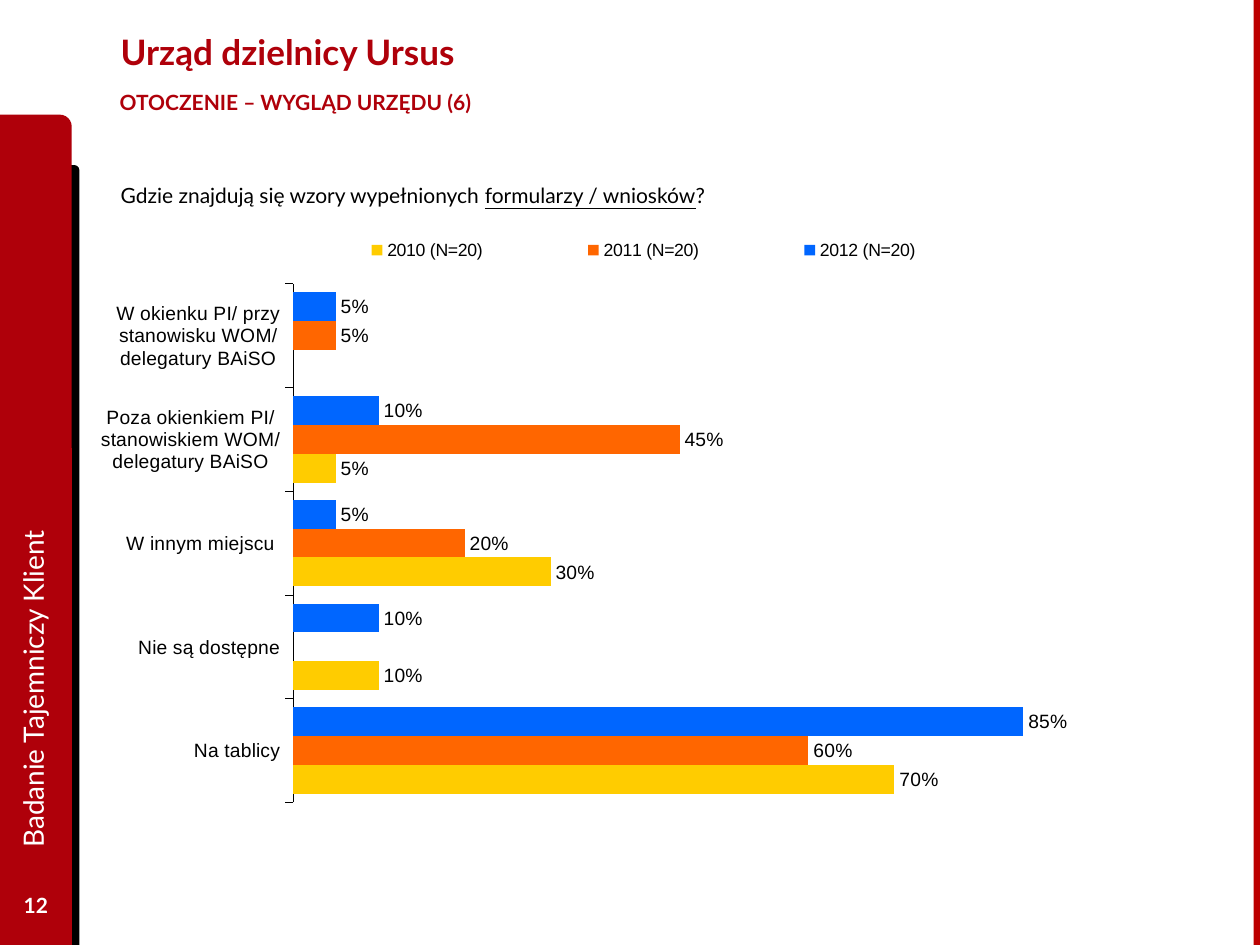
from dataclasses import dataclass

from lxml import etree
from pptx import Presentation
from pptx.chart.data import CategoryChartData
from pptx.dml.color import RGBColor
from pptx.enum.chart import (XL_CHART_TYPE, XL_LABEL_POSITION,
                             XL_LEGEND_POSITION, XL_TICK_MARK)
from pptx.enum.shapes import MSO_SHAPE
from pptx.enum.text import MSO_ANCHOR, PP_ALIGN
from pptx.oxml.ns import qn
from pptx.util import Inches, Pt

RECTANGLE = MSO_SHAPE.RECTANGLE
ROUND_CORNER = MSO_SHAPE.ROUND_1_RECTANGLE
TOP, MIDDLE = MSO_ANCHOR.TOP, MSO_ANCHOR.MIDDLE
LEFT, CENTER = PP_ALIGN.LEFT, PP_ALIGN.CENTER

COLORS = {
    "black": "000000", "white": "FFFFFF", "red": "AF000A", "edge": "BD0000",
    "blue": "0066FF", "orange": "FF6600", "yellow": "FFCC00",
}


@dataclass
class Panel:
    box: tuple
    geometry: int
    color: str


@dataclass
class Label:
    box: tuple
    runs: tuple  # underlined runs are the odd ones
    size: float
    color: str
    bold: bool = False
    anchor: int = TOP
    align: int = LEFT
    rotation: float = 0
    side_inset: float = 0.1
    wrap: bool = True


@dataclass
class Year:
    name: str
    values: tuple
    color: str


PANELS = [
    Panel((0.39, 1.31, 0.24, 6.19), ROUND_CORNER, "black"),
    Panel((0, 0.91, 0.57, 6.59), ROUND_CORNER, "red"),
    Panel((9.95, 0, 0.05, 7.5), RECTANGLE, "edge"),
]

LABELS = [
    Label((0.86, 0.05, 7.77, 0.72), ("Urząd dzielnicy Ursus",), 20, "red",
          bold=True, anchor=MIDDLE),
    Label((0.75, 0.66, 3.85, 0.33), ("OTOCZENIE – WYGLĄD URZĘDU (6)",), 12,
          "red", bold=True, side_inset=0.2, wrap=False),
    Label((0.86, 1.4, 6.47, 0.3),
          ("Gdzie znajdują się wzory wypełnionych ", "formularzy / wniosków", "?"),
          12, "black"),
    Label((0, 6.98, 0.57, 0.4), ("12",), 12, "white", bold=True,
          anchor=MIDDLE, align=CENTER),
    Label((-2.62, 3.69, 5.76, 0.51), ("Badanie Tajemniczy Klient",), 16,
          "white", anchor=MIDDLE, rotation=270),
]

PLACES = [
    "W okienku PI/ przy stanowisku WOM/ delegatury BAiSO",
    "Poza okienkiem PI/ stanowiskiem WOM/ delegatury BAiSO",
    "W innym miejscu ",
    "Nie są dostępne",
    "Na tablicy",
]
YEARS = [
    Year("2012 (N=20)", (0.05, 0.1, 0.05, 0.1, 0.85), "blue"),
    Year("2011 (N=20)", (0.05, 0.45, 0.2, None, 0.6), "orange"),
    Year("2010 (N=20)", (None, 0.05, 0.3, 0.1, 0.7), "yellow"),
]


def rgb(name: str) -> RGBColor:
    return RGBColor.from_string(COLORS[name])


def style_font(font, face: str, size: float, color: str, bold: bool = False) -> None:
    font.name = face
    font.size = Pt(size)
    font.bold = bold
    font.color.rgb = rgb(color)


def draw_panel(slide, panel: Panel) -> None:
    shape = slide.shapes.add_shape(panel.geometry, *map(Inches, panel.box))
    shape.shadow.inherit = False
    shape.fill.solid()
    shape.fill.fore_color.rgb = rgb(panel.color)
    shape.line.fill.background()


def draw_label(slide, label: Label) -> None:
    box = slide.shapes.add_textbox(*map(Inches, label.box))
    box.rotation = label.rotation
    frame = box.text_frame
    frame.word_wrap = label.wrap
    frame.vertical_anchor = label.anchor
    frame.margin_left = frame.margin_right = Inches(label.side_inset)
    paragraph = frame.paragraphs[0]
    paragraph.alignment = label.align
    style_font(paragraph.font, "Lato", label.size, label.color, label.bold)
    for index, text in enumerate(label.runs):
        run = paragraph.add_run()
        run.text = text
        if index % 2:
            run.font.underline = True


def manual_layout(x: float, y: float, w: float, h: float, inner: bool = False):
    layout = etree.Element(qn("c:layout"))
    manual = etree.SubElement(layout, qn("c:manualLayout"))
    settings = [("layoutTarget", "inner")] if inner else []
    settings += [("xMode", "edge"), ("yMode", "edge"),
                 ("x", x), ("y", y), ("w", w), ("h", h)]
    for tag, value in settings:
        etree.SubElement(manual, qn(f"c:{tag}")).set("val", str(value))
    return layout


def draw_chart(slide) -> None:
    data = CategoryChartData(number_format="0%")
    data.categories = PLACES
    for year in YEARS:
        data.add_series(year.name, year.values)
    chart = slide.shapes.add_chart(
        XL_CHART_TYPE.BAR_CLUSTERED,
        *map(Inches, (0.8, 1.85, 9.07, 4.52)), data).chart
    chart.has_title = False
    style_font(chart.font, "Arial", 11, "black")

    # Axes
    places = chart.category_axis
    places.reverse_order = True
    places.has_major_gridlines = False
    places.major_tick_mark = XL_TICK_MARK.OUTSIDE
    places.format.line.color.rgb = rgb("black")
    places.format.line.width = Pt(0.23)
    style_font(places.tick_labels.font, "Arial", 11, "black")
    shares = chart.value_axis
    shares.minimum_scale, shares.maximum_scale = 0, 0.9
    shares.has_major_gridlines = False
    shares.visible = False

    # Bars and their values
    plot = chart.plots[0]
    plot.gap_width, plot.overlap = 60, 0
    plot.vary_by_categories = False
    for series, year in zip(plot.series, YEARS):
        series.invert_if_negative = False
        series.format.fill.solid()
        series.format.fill.fore_color.rgb = rgb(year.color)
        values = series.data_labels
        values.show_value = True
        values.number_format = "0%"
        values.number_format_is_linked = False
        values.position = XL_LABEL_POSITION.OUTSIDE_END
        style_font(values.font, "Arial", 11, "black")

    # Legend and plot placement
    chart.has_legend = True
    legend = chart.legend
    legend.position = XL_LEGEND_POSITION.TOP
    legend.include_in_layout = False
    style_font(legend.font, "Arial", 10.1, "black")
    legend_xml = chart.element.find(".//" + qn("c:legend"))
    legend_xml.find(qn("c:legendPos")).addnext(manual_layout(0.15, 0, 0.65, 0.06))
    plot_area = chart.element.find(".//" + qn("c:plotArea"))
    for old in plot_area.findall(qn("c:layout")):
        plot_area.remove(old)
    plot_area.insert(0, manual_layout(0.168, 0.089, 0.677, 0.911, inner=True))


def main() -> None:
    deck = Presentation()
    deck.slide_width, deck.slide_height = Inches(10), Inches(7.5)
    slide = deck.slides.add_slide(deck.slide_layouts[6])
    for panel in PANELS:
        draw_panel(slide, panel)
    draw_chart(slide)
    for label in LABELS:
        draw_label(slide, label)
    deck.save("out.pptx")


if __name__ == "__main__":
    main()
